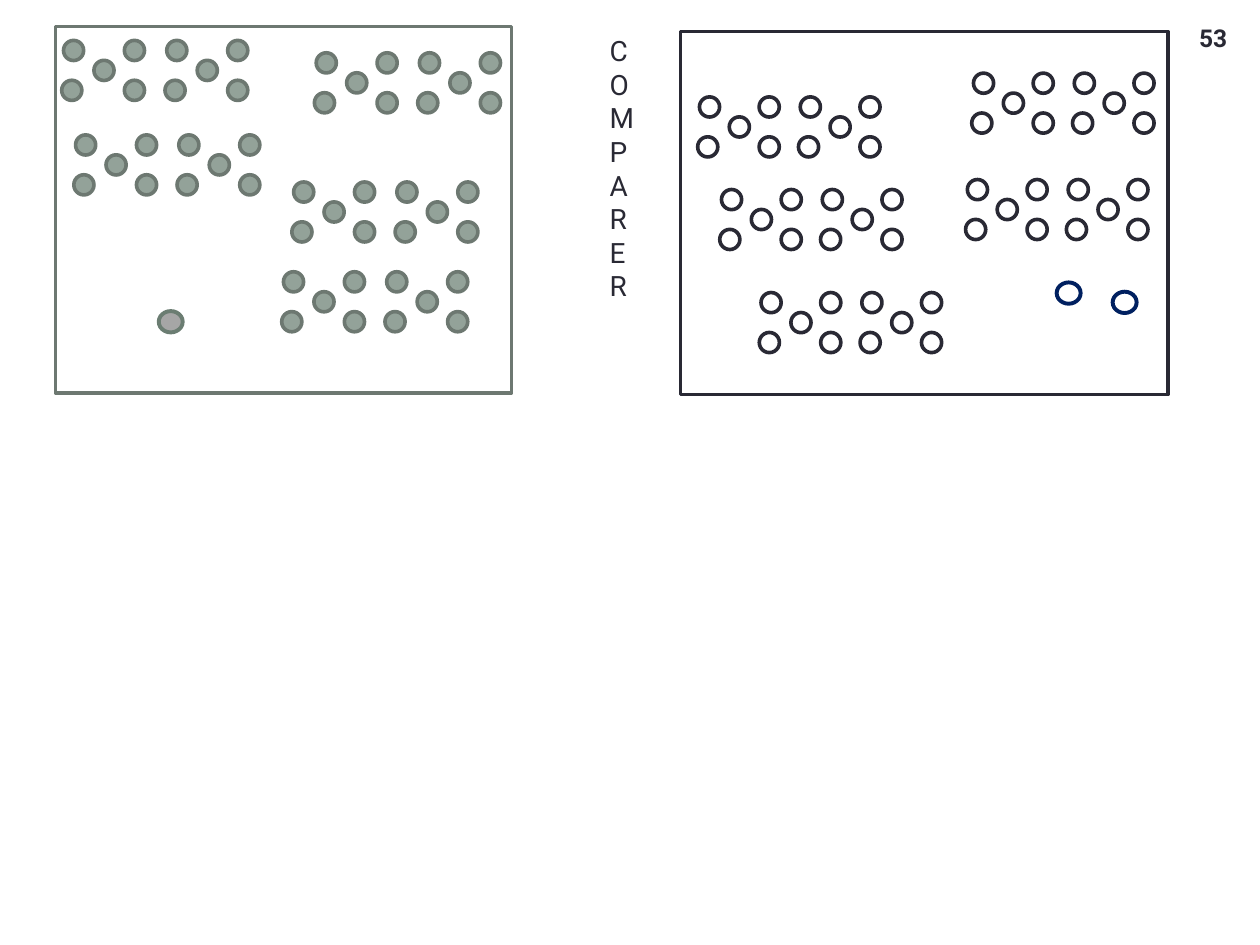
"""Build a slide that compares two boxes of dots grouped in tens."""
from pptx import Presentation
from pptx.dml.color import RGBColor
from pptx.enum.shapes import MSO_SHAPE
from pptx.enum.text import MSO_ANCHOR, PP_ALIGN
from pptx.util import Pt

OVAL, RECT = MSO_SHAPE.OVAL, MSO_SHAPE.RECTANGLE
TOP, MIDDLE = MSO_ANCHOR.TOP, MSO_ANCHOR.MIDDLE
LEFT, RIGHT = PP_ALIGN.LEFT, PP_ALIGN.RIGHT

THEME = {
    "font": "Roboto", "ink": "292934", "white": "FFFFFF", "navy": "002060",
    "sage": "93A299", "moss": "6D7871", "gray": "A6A6A6", "rim": "6B7D72",
    "word": 16, "page": 14, "thin": 2.08, "thick": 2.25,
}
DOT = 11.5
DROP = 22.8


def draw(home, kind, box, fill, line, width):
    shape = home.add_shape(kind, *map(Pt, box))
    shape.shadow.inherit = False
    if fill:
        shape.fill.solid()
        shape.fill.fore_color.rgb = RGBColor.from_string(THEME[fill])
    else:
        shape.fill.background()
    shape.line.color.rgb = RGBColor.from_string(THEME[line])
    shape.line.width = Pt(THEME[width])


def write(home, box, lines, align, anchor, look):
    frame = home.add_textbox(*map(Pt, box)).text_frame
    frame.word_wrap = True
    frame.vertical_anchor = anchor
    frame.text = "\n".join(lines)
    for para in frame.paragraphs:
        para.alignment = align
        font = para.runs[0].font
        for name, value in look.items():
            setattr(font, name, value)
        font.color.rgb = RGBColor.from_string(THEME["ink"])


deck = Presentation()
deck.slide_width, deck.slide_height = Pt(720), Pt(540)
shapes = deck.slides.add_slide(deck.slide_layouts[6]).shapes

panels = [
    {"frame": (31.7, 15.1, 260.6, 209.5), "fill": "sage", "line": "moss",
     "step": 34.8, "shift": 59,
     "tens": [(36.3, 23.1), (180.7, 30.2), (43.2, 77.1),
              (167.8, 104), (162, 155.3)]},
    {"frame": (388.8, 18, 278.6, 207.4), "fill": "white", "line": "ink",
     "step": 34.1, "shift": 57.6,
     "tens": [(399.7, 55.4), (556.3, 41.8), (412.3, 108.3),
              (552.8, 102.6), (434.9, 167.2)]},
]
for panel in panels:
    fill, line, step = panel["fill"], panel["line"], panel["step"]
    draw(shapes, RECT, panel["frame"], None, line, "thin")
    five = [(0, 0), (step, 0), (step, DROP), (step / 2, DROP / 2), (-1, DROP)]
    for left, top in panel["tens"]:
        ten = shapes.add_group_shape().shapes
        for shift in (0, panel["shift"]):
            for x, y in five:
                box = (left + shift + x, top + y, DOT, DOT)
                draw(ten, OVAL, box, fill, line, "thin")

ones = [(90.7, 177.8, "gray", "rim"), (603.8, 161.4, None, "navy"),
        (635.8, 166.7, None, "navy")]
for left, top, fill, line in ones:
    draw(shapes, OVAL, (left, top, 13.7, 12.2), fill, line, "thick")

write(shapes, (341.3, 15.8, 30.2, 162.7), ["C", "O", "M", "P", "ARER"],
      LEFT, TOP, {"name": THEME["font"], "size": Pt(THEME["word"])})
write(shapes, (624.2, 8.6, 84.2, 25.9), ["53"], RIGHT, MIDDLE,
      {"name": THEME["font"], "size": Pt(THEME["page"]), "bold": True})

deck.save("out.pptx")
